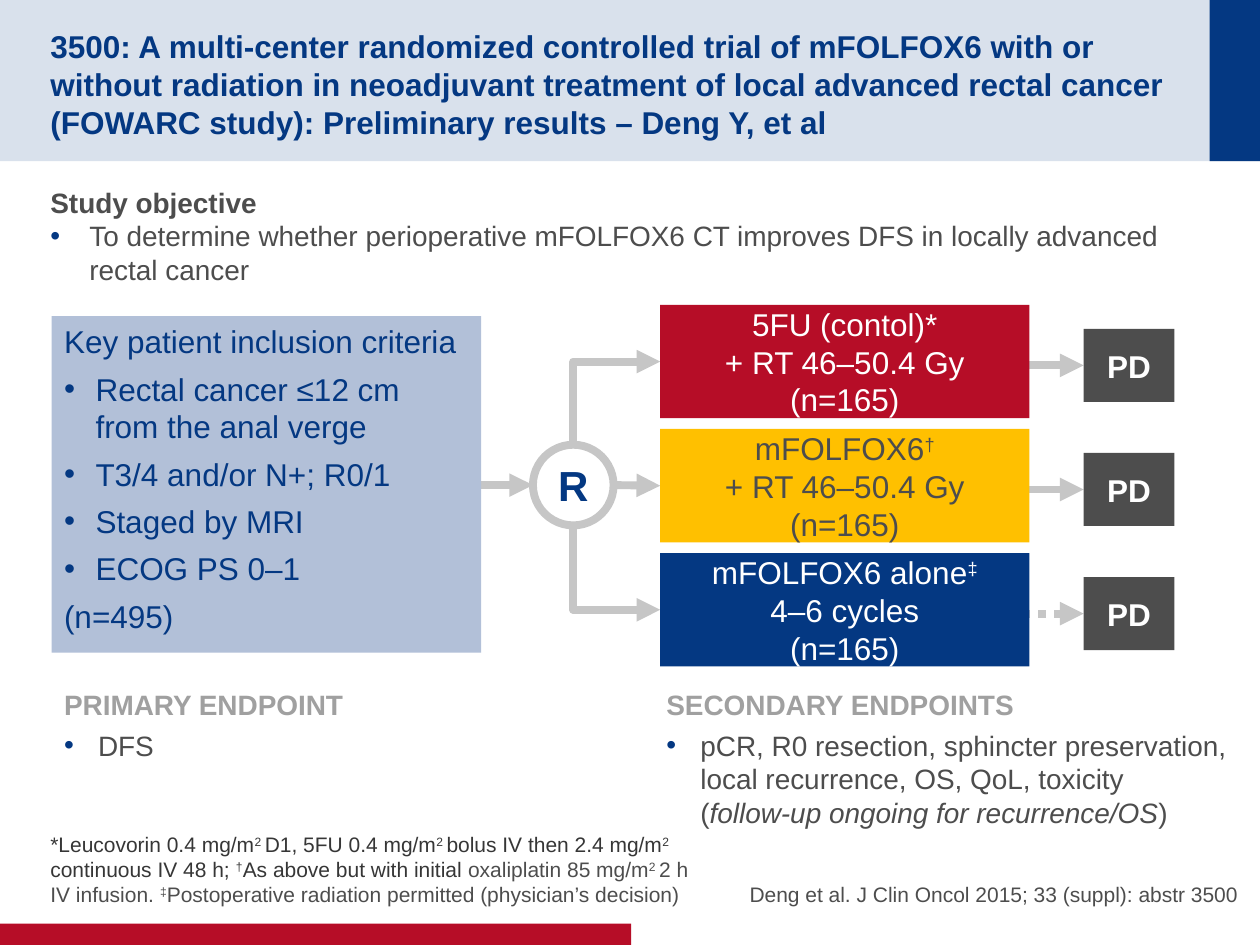
"""Build the FOWARC trial design slide."""
from lxml import etree
from pptx import Presentation
from pptx.dml.color import RGBColor
from pptx.enum.dml import MSO_LINE
from pptx.enum.shapes import MSO_CONNECTOR, MSO_SHAPE
from pptx.enum.text import MSO_ANCHOR, PP_ALIGN
from pptx.oxml.ns import qn
from pptx.util import Inches, Pt

RECT, OVAL = MSO_SHAPE.RECTANGLE, MSO_SHAPE.OVAL
LINE, ELBOW = MSO_CONNECTOR.STRAIGHT, MSO_CONNECTOR.ELBOW
LEFT, MID, RIGHT = PP_ALIGN.LEFT, PP_ALIGN.CENTER, PP_ALIGN.RIGHT
TOP, CENTER, BOTTOM = MSO_ANCHOR.TOP, MSO_ANCHOR.MIDDLE, MSO_ANCHOR.BOTTOM
DOT = MSO_LINE.ROUND_DOT
HEX = {"navy": "043882", "pale": "D9E1EC", "red": "B60D27", "gold": "FFC000",
       "sky": "B2C0D8", "dark": "4D4D4D", "ink": "363636", "gray": "A0A0A0",
       "line": "C6C6C6", "white": "FFFFFF"}
RGB = {name: RGBColor.from_string(code) for name, code in HEX.items()}

deck = Presentation()
deck.slide_width, deck.slide_height = Inches(10), Inches(7.5)
slide = deck.slides.add_slide(deck.slide_layouts[6])
shapes = slide.shapes


def box(area, fill=None, kind=RECT, anchor=TOP, pad=(0.1, 0.05, 0.1, 0.05)):
    """Add a filled shape, or a text box when there is no fill."""
    area = [Inches(n) for n in area]
    if fill:
        item = shapes.add_shape(kind, *area)
        item.shadow.inherit = False
        item.fill.solid()
        item.fill.fore_color.rgb = RGB[fill]
        item.line.fill.background()
    else:
        item = shapes.add_textbox(*area)
    frame = item.text_frame
    frame.word_wrap = True
    frame.vertical_anchor = anchor
    (frame.margin_left, frame.margin_top,
     frame.margin_right, frame.margin_bottom) = [Inches(n) for n in pad]
    return item


def write(item, text, size, color, bold=False, align=LEFT, after=0, hang=0,
          tilt=False):
    """Add a paragraph; every second part between bars is raised or tilted."""
    frame = item.text_frame
    para = frame.paragraphs[0]
    if para.runs:
        para = frame.add_paragraph()
    para.alignment = align
    para.space_after = Pt(after)
    if hang:
        props = para._p.get_or_add_pPr()
        props.set("marL", str(Inches(hang)))
        props.set("indent", str(-Inches(hang)))
        tint = etree.SubElement(props, qn("a:buClr"))
        etree.SubElement(tint, qn("a:srgbClr"), val=HEX["navy"])
        etree.SubElement(props, qn("a:buFont"), typeface="Arial")
        etree.SubElement(props, qn("a:buChar"), char="•")
    font = para.font
    font.name, font.size, font.bold = "Arial", Pt(size), bold
    font.color.rgb = RGB[color]
    for i, part in enumerate(text.split("|")):
        for j, row in enumerate(part.split("\v")):
            if j:
                para.add_line_break()
            if not row:
                continue
            run = para.add_run()
            run.text = row
            if i % 2 and tilt:
                run.font.italic = True
            elif i % 2:
                run._r.get_or_add_rPr().set("baseline", "30000")
    return para


box((0, 0, 10, 1.28), "pale")
box((9.6, 0, 0.4, 1.28), "navy")
box((0, 7.33, 5.01, 0.17), "red")

title = box((0.4, 0.2, 9.01, 0.88), anchor=CENTER, pad=(0, 0.05, 0, 0))
write(title, "3500: A multi-center randomized controlled trial of mFOLFOX6 with "
      "or without radiation in neoadjuvant treatment of local advanced rectal "
      "cancer (FOWARC study): Preliminary results – Deng Y, et al",
      18, "navy", True)

goal = box((0.4, 1.42, 9.19, 0.95), pad=(0, 0.05, 0.1, 0.05))
write(goal, "Study objective", 16, "dark", True)
write(goal, "To determine whether perioperative mFOLFOX6 CT improves DFS in "
      "locally advanced rectal cancer", 16, "dark", hang=0.31)

note = box((0.4, 6.67, 5.1, 0.53), anchor=BOTTOM, pad=(0, 0, 0, 0))
para = write(note, "*Leucovorin 0.4 mg/m|2 |D1, 5FU 0.4 mg/m|2 |bolus IV then "
             "2.4 mg/m|2| continuous IV 48 h; |†|As above but with initial ||"
             "oxaliplatin 85 mg/m|2 |2 h IV infusion. |‡|Postoperative "
             "radiation permitted (physician’s decision)", 12, "ink", after=4)
for run in para.runs[9:]:
    run.font.color.rgb = RGB["dark"]
cite = box((5.08, 6.67, 4.75, 0.53), anchor=BOTTOM, pad=(0, 0, 0, 0))
write(cite, "Deng et al. J Clin Oncol 2015; 33 (suppl): abstr 3500",
      12, "dark", align=RIGHT, after=4)

hub = box((4.23, 3.53, 0.64, 0.64), "white", OVAL, CENTER)
hub.text_frame.word_wrap = False
hub.line.color.rgb = RGB["line"]
hub.line.width = Pt(4.5)
write(hub, "R", 24, "navy", True, MID)

arms = [
    ("red", "white", ["5FU (contol)*", "+ RT 46–50.4 Gy", "(n=165)"]),
    ("gold", "dark", ["mFOLFOX6|†", "+ RT 46–50.4 Gy", "(n=165)"]),
    ("navy", "white", ["mFOLFOX6 alone|‡", "4–6 cycles", "(n=165)"]),
]
links = [(LINE, 4.23, 3.85, 3.42, 3.85), (ELBOW, 5.24, 2.87, 4.55, 3.53),
         (LINE, 5.24, 3.85, 4.87, 3.85), (ELBOW, 5.24, 4.84, 4.55, 4.17)]
tops = [2.42 + 0.985 * i for i in range(len(arms))]
links += [(LINE, 8.6, top + 0.48, 7.98, top + 0.48) for top in tops]
wires = []
for kind, *ends in links:
    wire = shapes.add_connector(kind, *[Inches(n) for n in ends])
    wire.line.color.rgb = RGB["line"]
    wire.line.width = Pt(4.5)
    if wire is not None and len(wires) == len(links) - 1:
        wire.line.dash_style = DOT
    props = wire._element.spPr
    if kind == ELBOW:
        props.find(qn("a:prstGeom")).set("prst", "bentConnector2")
    etree.SubElement(props.find(qn("a:ln")), qn("a:headEnd"), type="triangle")
    etree.SubElement(props, qn("a:effectLst"))
    wires.append(wire)

for top, (fill, color, rows), wire in zip(tops, arms, wires[4:]):
    end = box((8.6, top + 0.19, 0.72, 0.58), "dark", anchor=CENTER,
              pad=(0.1, 0, 0.1, 0))
    write(end, "PD", 18, "white", True, MID)
    wire.begin_connect(end, 1)
    arm = box((5.24, top, 2.93, 0.9), fill, anchor=CENTER, pad=(0.1, 0, 0.1, 0))
    for row in rows:
        write(arm, row, 18, color, align=MID)
    if fill == "gold":
        wires[2].begin_connect(arm, 1)

entry = box((0.41, 2.51, 3.41, 2.67), "sky")
write(entry, "Key patient inclusion criteria", 18, "navy", after=5.4)
for row in ["Rectal cancer ≤12 cm from the anal verge", "T3/4 and/or N+; R0/1",
            "Staged by MRI", "ECOG PS 0–1"]:
    write(entry, row, 18, "navy", after=5.4, hang=0.25)
write(entry, "(n=495)", 18, "navy", after=5.4)

for left, width, head, text in [
    (0.41, 4.52, "PRIMARY ENDPOINT", "DFS"),
    (5.19, 4.81, "SECONDARY ENDPOINTS",
     "pCR, R0 resection, sphincter preservation, local recurrence, OS, QoL, "
     "toxicity\v(|follow-up ongoing for recurrence/OS|)"),
]:
    aim = box((left, 5.41, width, 0.76))
    write(aim, head, 16, "gray", True, after=4)
    write(aim, text, 16, "dark", after=4, hang=0.27, tilt=True)

deck.save("out.pptx")
